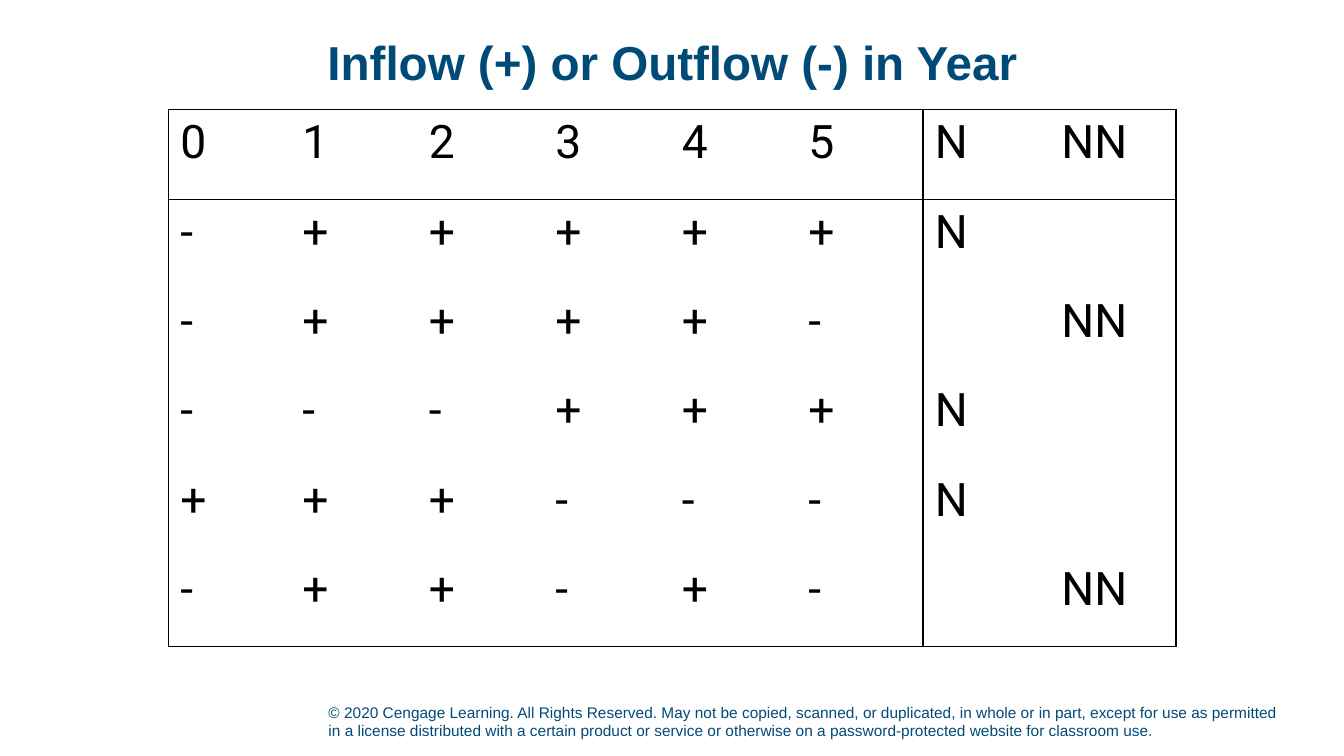
import pptx
import pptx.util
import pptx.dml.color
import pptx.enum.text
from lxml import etree

Inches, Pt = pptx.util.Inches, pptx.util.Pt
Anchor, Align = pptx.enum.text.MSO_ANCHOR, pptx.enum.text.PP_ALIGN

# Content
BLUE, BLACK = "004A78", "000000"
TITLE = "Inflow (+) or Outflow (-) in Year"
NOTICE = ("© 2020 Cengage Learning. All Rights Reserved. May not be copied, "
          "scanned, or duplicated, in whole or in part, except for use as "
          "permitted in a license distributed with a certain product or service "
          "or otherwise on a password-protected website for classroom use.")
YEARS = 6
ROWS = [
    ("012345", "N", "NN"),
    ("-+++++", "N", ""),
    ("-++++-", "", "NN"),
    ("---+++", "N", ""),
    ("+++---", "N", ""),
    ("-++-+-", "", "NN"),
]
WIDTHS = [1.21] + [1.255] * 7
HEIGHT = 5.32 / len(ROWS)


def style(para, face, size, color, bold=False):
    font = para.font
    font.name, font.size, font.bold = face, Pt(size), bold
    font.color.rgb = pptx.dml.color.RGBColor.from_string(color)


def add_text(slide, box, text, size, anchor, bold=False):
    frame = slide.shapes.add_textbox(*map(Inches, box)).text_frame
    frame.word_wrap = True
    frame.vertical_anchor = anchor
    para = frame.paragraphs[0]
    para.text = text
    style(para, "Arial", size, BLUE, bold)
    return para


def add_edge(cell, side, shown):
    props = cell._tc.get_or_add_tcPr()
    space = "{" + props.nsmap["a"] + "}"
    line = etree.SubElement(props, space + "ln" + side, w=str(Pt(1)))
    if shown:
        fill = etree.SubElement(line, space + "solidFill")
        etree.SubElement(fill, space + "srgbClr", val=BLACK)
    else:
        etree.SubElement(line, space + "noFill")


def add_grid(slide):
    count, wide = len(ROWS), len(WIDTHS)
    table = slide.shapes.add_table(
        count, wide, Inches(1.67), Inches(1.09),
        Inches(sum(WIDTHS)), Inches(HEIGHT * count)).table
    table.first_row = table.horz_banding = False
    for col, width in zip(table.columns, WIDTHS):
        col.width = Inches(width)

    for r, (signs, *kinds) in enumerate(ROWS):
        table.rows[r].height = Inches(HEIGHT)
        for c, text in enumerate([*signs, *kinds]):
            cell = table.cell(r, c)
            cell.margin_left = cell.margin_right = Inches(0.12)
            cell.margin_top = cell.margin_bottom = Inches(0.06)
            para = cell.text_frame.paragraphs[0]
            para.text = text
            style(para, "Roboto", 33, BLACK)
            # Outer frame, header rule and rule after the years
            add_edge(cell, "L", c in (0, YEARS))
            add_edge(cell, "R", c in (YEARS - 1, wide - 1))
            add_edge(cell, "T", r in (0, 1))
            add_edge(cell, "B", r in (0, count - 1))
            cell.fill.background()


def main():
    deck = pptx.Presentation()
    deck.slide_width, deck.slide_height = Inches(13.33), Inches(7.5)
    slide = deck.slides.add_slide(deck.slide_layouts[6])

    # Notice, title and table
    add_text(slide, (3.16, 6.89, 9.63, 0.5), NOTICE, 11, Anchor.BOTTOM)
    head = add_text(slide, (0.92, 0.15, 11.5, 1), TITLE, 34, Anchor.MIDDLE, True)
    head.alignment = Align.CENTER
    head.line_spacing = 0.9
    add_grid(slide)

    deck.save("out.pptx")


if __name__ == "__main__":
    main()
